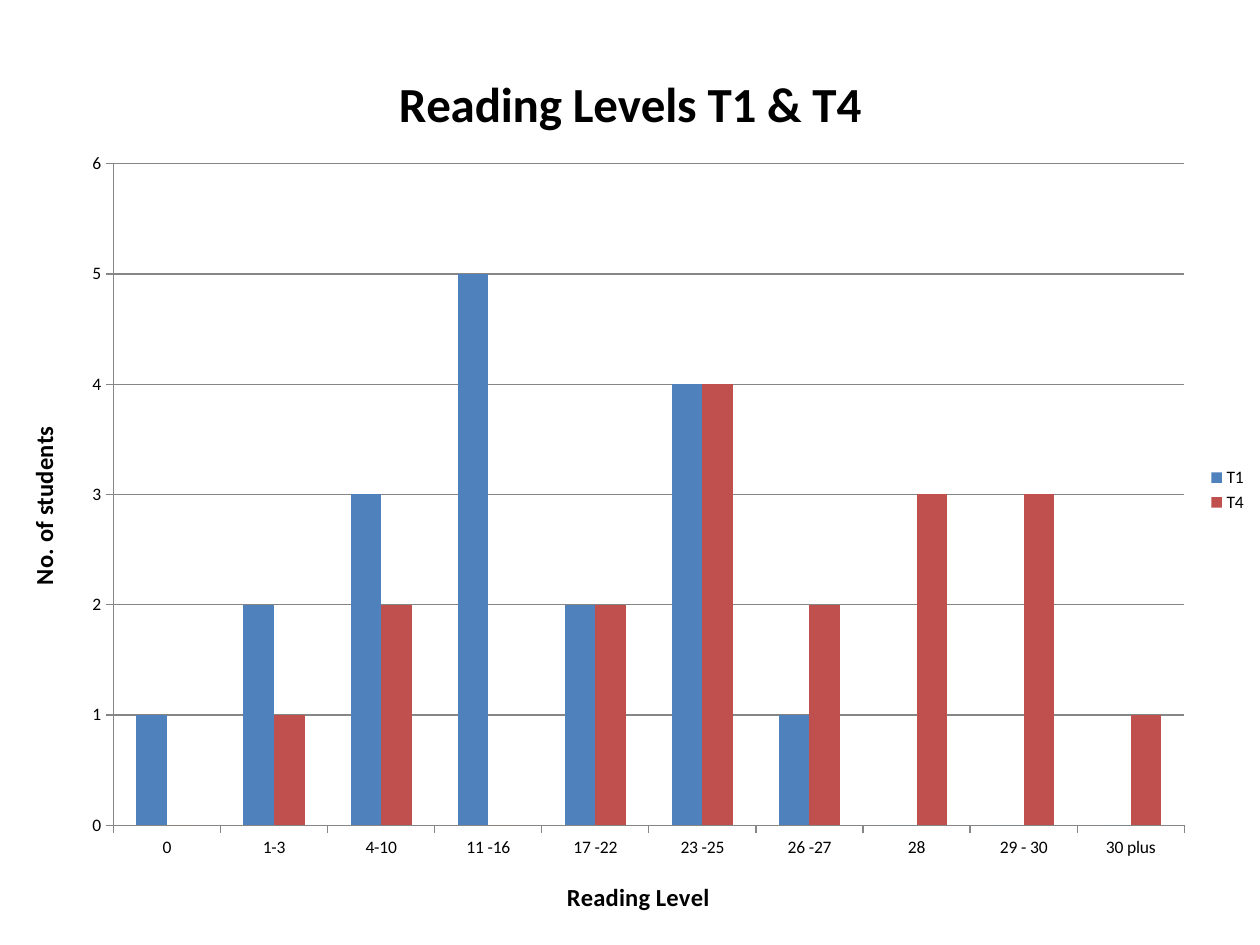
"""Build a slide with a clustered column chart of reading levels in T1 and T4."""
from lxml import etree
from pptx import Presentation
from pptx import util as u
from pptx.chart import data
from pptx.dml.color import RGBColor
from pptx.enum import chart as charts
from pptx.oxml import ns

COLORS = {"T1": "4F81BD", "T4": "C0504D", "text": "000000", "line": "868686"}
LEVELS = ["0", "1-3", "4-10", "11 -16", "17 -22", "23 -25", "26 -27", "28", "29 - 30", "30 plus"]
STUDENTS = {
    "T1": [1, 2, 3, 5, 2, 4, 1, 0, 0, 0],
    "T4": [0, 1, 2, 0, 2, 4, 2, 3, 3, 1],
}
PLOT_LAYOUT = {
    "layoutTarget": "inner", "xMode": "edge", "yMode": "edge",
    "x": 0.09, "y": 0.14, "w": 0.85, "h": 0.73,
}


def set_title(owner, wording, size):
    owner.has_title = True
    frame = (owner.chart_title if hasattr(owner, "chart_title") else owner.axis_title).text_frame
    frame.text = wording
    font = frame.paragraphs[0].font
    font.name, font.size, font.bold = "Calibri", u.Pt(size), True
    font.color.rgb = RGBColor.from_string(COLORS["text"])


presentation = Presentation()
presentation.slide_width, presentation.slide_height = u.Pt(720), u.Pt(540)
slide = presentation.slides.add_slide(presentation.slide_layouts[6])

chart_data = data.CategoryChartData()
chart_data.categories = LEVELS
for term, counts in STUDENTS.items():
    chart_data.add_series(term, counts)
chart = slide.shapes.add_chart(
    charts.XL_CHART_TYPE.COLUMN_CLUSTERED, u.Pt(0), u.Pt(21), u.Pt(720), u.Pt(518), chart_data
).chart
chart.font.name, chart.font.size = "Calibri", u.Pt(10)
chart.font.color.rgb = RGBColor.from_string(COLORS["text"])

set_title(chart, "Reading Levels T1 & T4", 28)
set_title(chart.category_axis, "Reading Level", 14)
set_title(chart.value_axis, "No. of students", 14)

chart.has_legend = True
chart.legend.position = charts.XL_LEGEND_POSITION.RIGHT
chart.legend.include_in_layout = False

value_axis = chart.value_axis
value_axis.minimum_scale, value_axis.maximum_scale, value_axis.major_unit = 0, 6, 1
value_axis.has_major_gridlines = True
for axis in (chart.category_axis, value_axis):
    axis.major_tick_mark = charts.XL_TICK_MARK.OUTSIDE
    axis.minor_tick_mark = charts.XL_TICK_MARK.NONE
for line in (chart.category_axis.format.line, value_axis.format.line, value_axis.major_gridlines.format.line):
    line.color.rgb = RGBColor.from_string(COLORS["line"])
    line.width = u.Pt(0.75)

plot = chart.plots[0]
plot.gap_width, plot.overlap, plot.vary_by_categories = 150, 0, False
for series in plot.series:
    series.format.fill.solid()
    series.format.fill.fore_color.rgb = RGBColor.from_string(COLORS[series.name])

plot_area = chart.element.find(".//" + ns.qn("c:plotArea"))
for old_layout in plot_area.findall(ns.qn("c:layout")):
    plot_area.remove(old_layout)
layout = etree.Element(ns.qn("c:layout"))
manual_layout = etree.SubElement(layout, ns.qn("c:manualLayout"))
for name, value in PLOT_LAYOUT.items():
    etree.SubElement(manual_layout, ns.qn(f"c:{name}"), val=str(value))
plot_area.insert(0, layout)

presentation.save("out.pptx")
